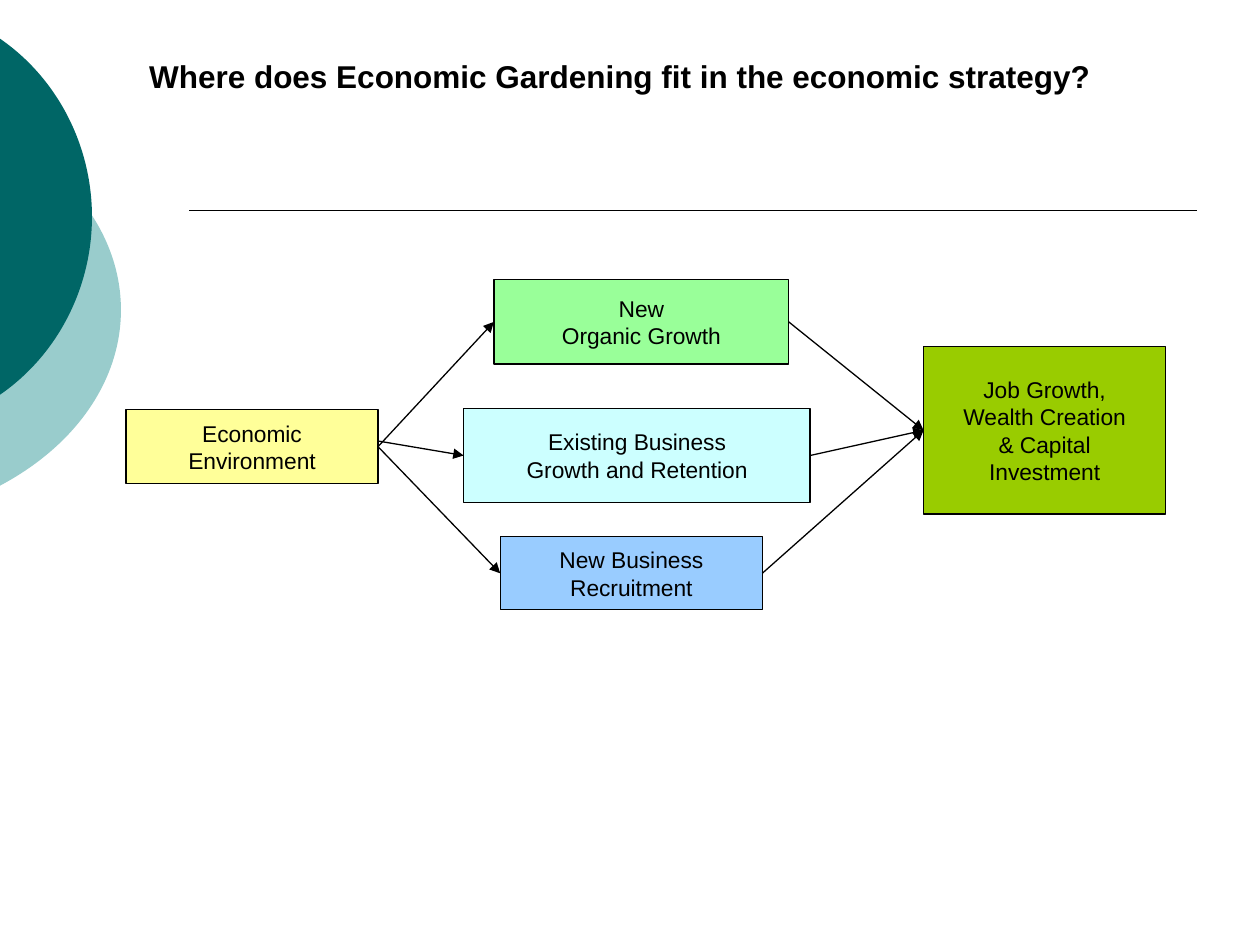
from dataclasses import dataclass
from typing import Optional

from lxml import etree
from pptx import Presentation
from pptx.dml.color import RGBColor
from pptx.enum.shapes import MSO_CONNECTOR, MSO_SHAPE
from pptx.enum.text import MSO_ANCHOR, PP_ALIGN
from pptx.oxml.ns import qn
from pptx.util import Inches, Pt

STRAIGHT = MSO_CONNECTOR.STRAIGHT
RECTANGLE = MSO_SHAPE.RECTANGLE
CENTER = PP_ALIGN.CENTER
MIDDLE, TOP = MSO_ANCHOR.MIDDLE, MSO_ANCHOR.TOP
LEFT_SIDE, RIGHT_SIDE = 1, 3
TITLE_ONLY = 5
DISC_EDGE = -0.01
FONT = "Arial"
COLORS = {
    "black": "000000",
    "teal": "006666",
    "pale_teal": "99CCCC",
    "yellow": "FFFF99",
    "green": "99FF99",
    "cyan": "CCFFFF",
    "blue": "99CCFF",
    "lime": "99CC00",
}


@dataclass
class Disc:
    color: str
    frame: tuple[float, float, float, float]
    top: float
    middle: float
    right: float
    upper_handle: tuple[float, float]
    side_handle_y: float


@dataclass
class Box:
    name: str
    left: float
    top: float
    width: float
    height: float
    color: str
    lines: list[str]


@dataclass
class Arrow:
    source: str
    target: str
    start: Optional[tuple[float, float]] = None


DISCS = [
    Disc("pale_teal", (-3.54, 0.75, 4.5, 3.42), 1.06, 2.46, 0.96, (0.6, 1.38), 1.9),
    Disc("teal", (-2.65, 0, 3.38, 3.45), 0.3, 1.72, 0.73, (0.46, 0.62), 1.16),
]
BOXES = [
    Box("environment", 1, 3.25, 2, 0.59, "yellow", ["Economic", "Environment"]),
    Box("organic", 3.92, 2.22, 2.34, 0.67, "green", ["New", "Organic Growth"]),
    Box("existing", 3.68, 3.24, 2.75, 0.75, "cyan",
        ["Existing Business", "Growth and Retention"]),
    Box("recruitment", 3.97, 4.26, 2.08, 0.58, "blue", ["New Business", "Recruitment"]),
    Box("outcome", 7.33, 2.75, 1.92, 1.33, "lime",
        ["Job Growth,", "Wealth Creation", "& Capital", "Investment"]),
]
ARROWS = [
    Arrow("environment", "organic"),
    Arrow("environment", "existing", (3, 3.5)),
    Arrow("environment", "recruitment"),
    Arrow("organic", "outcome"),
    Arrow("existing", "outcome"),
    Arrow("recruitment", "outcome"),
]


def rgb(name: str) -> RGBColor:
    return RGBColor.from_string(COLORS[name])


def add_segment(outline, tag: str, points: list, disc: Disc) -> None:
    segment = etree.SubElement(outline, qn(tag))
    for x, y in points:
        etree.SubElement(segment, qn("a:pt"), x=str(Inches(x - disc.frame[0])),
                         y=str(Inches(y - disc.frame[1])))


def draw_disc(page, disc: Disc) -> None:
    left, top, width, height = map(Inches, disc.frame)
    builder = page.shapes.build_freeform(left, top)
    builder.add_line_segments([(left + width, top + height)])
    shape = builder.convert_to_shape()
    outline = next(shape._element.iter(qn("a:path")))
    for segment in list(outline):
        outline.remove(segment)
    start = (DISC_EDGE, disc.top)
    side = (disc.right, disc.middle)
    upper = [disc.upper_handle, (disc.right, disc.side_handle_y), side]
    lower = [(x, 2 * disc.middle - y) for x, y in (upper[1], upper[0], start)]
    add_segment(outline, "a:moveTo", [start], disc)
    add_segment(outline, "a:cubicBezTo", upper, disc)
    add_segment(outline, "a:cubicBezTo", lower, disc)
    etree.SubElement(outline, qn("a:close"))
    shape.shadow.inherit = False
    shape.fill.solid()
    shape.fill.fore_color.rgb = rgb(disc.color)
    shape.line.fill.background()


def set_frame(frame, anchor, wrap: bool) -> None:
    frame.margin_left = frame.margin_right = Inches(0.07)
    frame.margin_top = frame.margin_bottom = Inches(0.04)
    frame.vertical_anchor = anchor
    frame.word_wrap = wrap


def add_span(para, text: str, size: float, bold: bool = False) -> None:
    para.alignment = CENTER
    span = para.add_run()
    span.text = text
    span.font.name = FONT
    span.font.size = Pt(size)
    span.font.bold = bold
    span.font.color.rgb = rgb("black")


def draw_title(page, text: str) -> None:
    title = page.shapes.title
    title.left, title.top = Inches(0.83), Inches(0.41)
    title.width, title.height = Inches(8.25), Inches(0.37)
    set_frame(title.text_frame, TOP, True)
    add_span(title.text_frame.paragraphs[0], text, 18, True)


def draw_box(page, box: Box):
    shape = page.shapes.add_shape(RECTANGLE, Inches(box.left), Inches(box.top),
                                  Inches(box.width), Inches(box.height))
    shape.shadow.inherit = False
    shape.fill.solid()
    shape.fill.fore_color.rgb = rgb(box.color)
    shape.line.color.rgb = rgb("black")
    shape.line.width = Pt(0.75)
    frame = shape.text_frame
    set_frame(frame, MIDDLE, False)
    for index, line in enumerate(box.lines):
        para = frame.add_paragraph() if index else frame.paragraphs[0]
        add_span(para, line, 13)
    return shape


def draw_line(page, start: tuple[float, float], end: tuple[float, float], width: float):
    line = page.shapes.add_connector(STRAIGHT, *map(Inches, start + end))
    line.line.color.rgb = rgb("black")
    line.line.width = Pt(width)
    etree.SubElement(line._element.spPr, qn("a:effectLst"))
    return line


def draw_arrow(page, arrow: Arrow, shapes: dict) -> None:
    line = draw_line(page, arrow.start or (0, 0), (0, 0), 0.75)
    if arrow.start is None:
        line.begin_connect(shapes[arrow.source], RIGHT_SIDE)
    line.end_connect(shapes[arrow.target], LEFT_SIDE)
    etree.SubElement(line.line._get_or_add_ln(), qn("a:tailEnd"), type="triangle")


def main() -> None:
    deck = Presentation()
    deck.slide_width, deck.slide_height = Inches(10), Inches(7.5)
    page = deck.slides.add_slide(deck.slide_layouts[TITLE_ONLY])
    for disc in DISCS:
        draw_disc(page, disc)
    draw_line(page, (1.5, 1.67), (9.5, 1.67), 1)
    draw_title(page, "Where does Economic Gardening fit in the economic strategy? ")
    shapes = {box.name: draw_box(page, box) for box in BOXES}
    for arrow in ARROWS:
        draw_arrow(page, arrow, shapes)
    deck.save("out.pptx")


if __name__ == "__main__":
    main()
